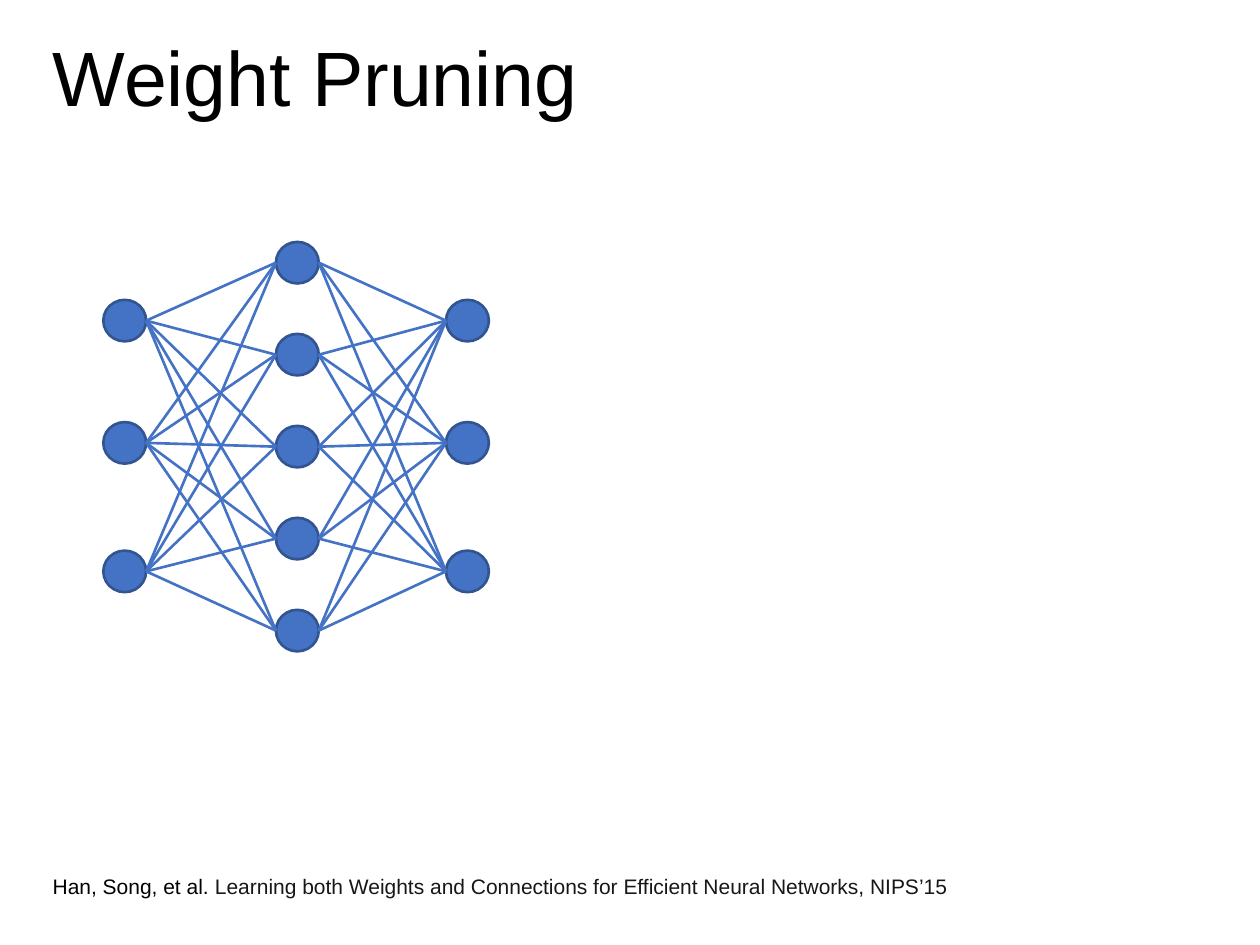
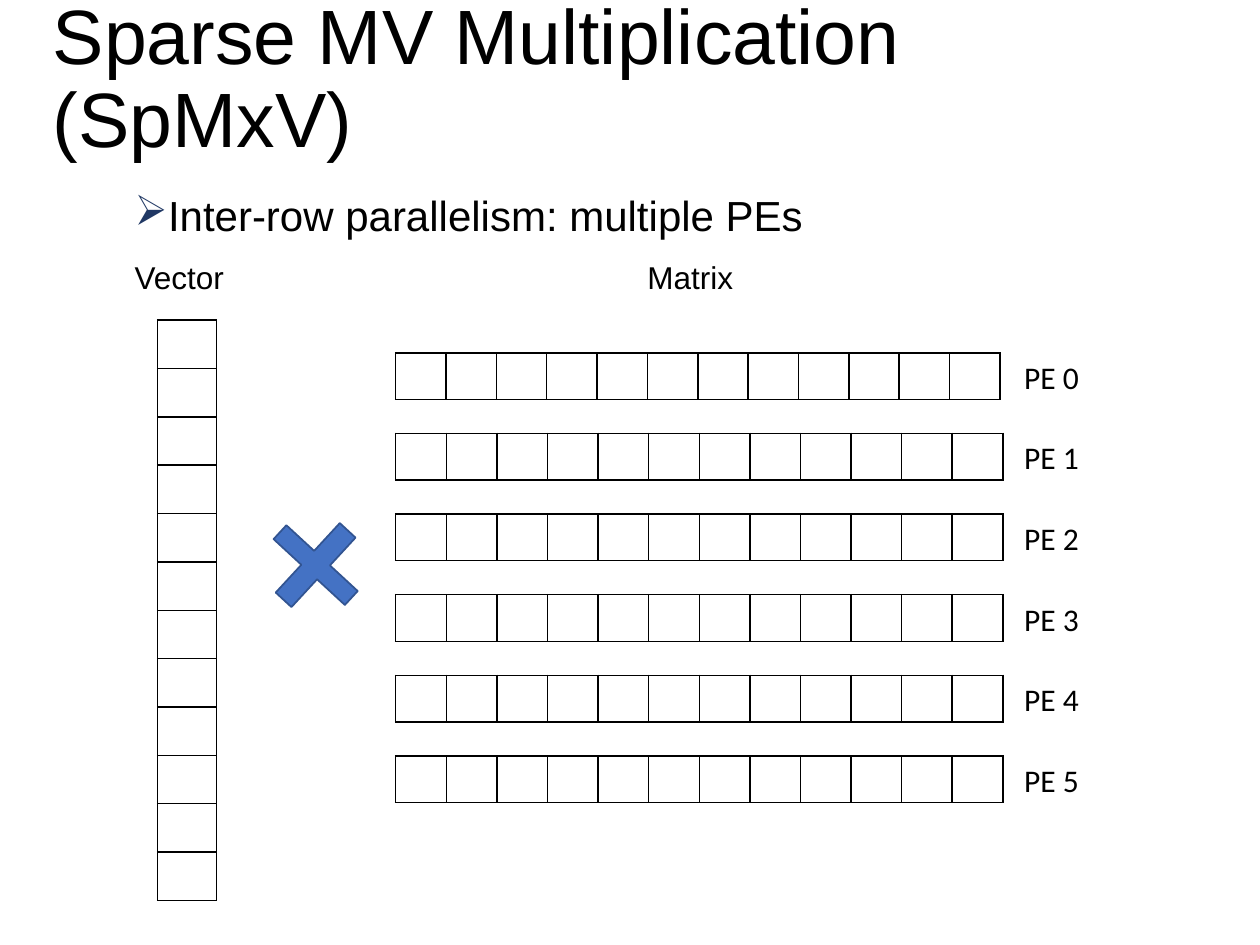
"""Build two slides on weight pruning and sparse matrix-vector multiplication."""
from dataclasses import dataclass
from itertools import product

from lxml import etree
from pptx import Presentation
from pptx.dml.color import RGBColor
from pptx.enum.shapes import MSO_CONNECTOR, MSO_SHAPE
from pptx.enum.text import MSO_ANCHOR
from pptx.oxml.ns import qn
from pptx.util import Inches, Pt

STRAIGHT = MSO_CONNECTOR.STRAIGHT
ELLIPSE = MSO_SHAPE.OVAL
PLUS = MSO_SHAPE.CROSS
TOP = MSO_ANCHOR.TOP
MIDDLE = MSO_ANCHOR.MIDDLE
BLANK_LAYOUT = 6


@dataclass(frozen=True)
class Theme:
    """Colours, fonts and type sizes of the deck."""

    ink: str = "000000"
    citation: str = "181717"
    accent: str = "4472C4"
    accent_edge: str = "325491"
    bullet: str = "203864"
    font: str = "Arial"
    label_font: str = "Calibri"
    title_size: int = 44
    body_size: int = 24
    label_size: int = 18
    source_size: int = 12


class Deck:
    """Holds the theme and the current slide and draws each kind of element."""

    def __init__(self, theme):
        """Open an empty 10 by 7.5 inch presentation."""
        self.theme = theme
        self.presentation = Presentation()
        self.presentation.slide_width = Inches(10)
        self.presentation.slide_height = Inches(7.5)
        self.slide = None

    def new_slide(self, title):
        """Start a blank slide with the shared title."""
        layout = self.presentation.slide_layouts[BLANK_LAYOUT]
        self.slide = self.presentation.slides.add_slide(layout)
        self.text(title, box=(0.32, 0.1, 9.35, 1.09), size=self.theme.title_size,
                  anchor=MIDDLE, line_spacing=0.9)

    def text(self, *runs, box, size, font=None, colors=(), anchor=TOP,
             line_spacing=None, space_before=None):
        """Add a text box with one paragraph of runs and return the paragraph."""
        shape = self.slide.shapes.add_textbox(*map(Inches, box))
        frame = shape.text_frame
        frame.word_wrap = True
        frame.vertical_anchor = anchor
        paragraph = frame.paragraphs[0]
        paragraph.line_spacing = line_spacing
        paragraph.space_before = space_before
        for words, color in zip(runs, colors or [self.theme.ink] * len(runs)):
            run = paragraph.add_run()
            run.text = words
            run.font.name = font or self.theme.font
            run.font.size = Pt(size)
            run.font.color.rgb = RGBColor.from_string(color)
        return paragraph

    def bullet(self, words, box):
        """Add one arrow-bulleted line."""
        paragraph = self.text(words, box=box, size=self.theme.body_size,
                              line_spacing=0.9, space_before=Pt(10))
        properties = paragraph._p.get_or_add_pPr()
        properties.set("marL", str(Inches(0.25)))
        properties.set("indent", str(-Inches(0.25)))
        color = etree.SubElement(properties, qn("a:buClr"))
        etree.SubElement(color, qn("a:srgbClr"), val=self.theme.bullet)
        etree.SubElement(properties, qn("a:buChar"), char="➢")

    def shape(self, kind, box, line_width):
        """Add an accent-filled preset shape."""
        shape = self.slide.shapes.add_shape(kind, *map(Inches, box))
        shape.shadow.inherit = False
        shape.fill.solid()
        shape.fill.fore_color.rgb = RGBColor.from_string(self.theme.accent)
        shape.line.color.rgb = RGBColor.from_string(self.theme.accent_edge)
        shape.line.width = Pt(line_width)
        return shape

    def link(self, start, end):
        """Draw a straight accent line between two points."""
        line = self.slide.shapes.add_connector(STRAIGHT, *map(Inches, start + end))
        line.line.color.rgb = RGBColor.from_string(self.theme.accent)
        line.line.width = Pt(1.5)
        etree.SubElement(line._element.spPr, qn("a:effectLst"))

    def grid(self, row_count, column_count, box):
        """Add an empty table of equal cells with thin borders."""
        frame = self.slide.shapes.add_table(row_count, column_count, *map(Inches, box))
        table = frame.table
        table.first_row = table.horz_banding = False
        for column in table.columns:
            column.width = Inches(box[2] / column_count)
        for row in table.rows:
            row.height = Inches(box[3] / row_count)
        for cell in table.iter_cells():
            cell.margin_left = cell.margin_right = 0
            cell.margin_top = cell.margin_bottom = 0
            self.border(cell)
            cell.fill.background()

    def border(self, cell):
        """Give a table cell a thin line on all four sides."""
        properties = cell._tc.get_or_add_tcPr()
        for side in ("lnL", "lnR", "lnT", "lnB"):
            line = etree.SubElement(properties, qn(f"a:{side}"), w=str(Pt(1)))
            fill = etree.SubElement(line, qn("a:solidFill"))
            etree.SubElement(fill, qn("a:srgbClr"), val=self.theme.ink)


def weight_pruning(deck):
    """Draw the fully connected network and its source."""
    theme = deck.theme
    deck.new_slide("Weight Pruning")
    deck.text("Han, Song, et al.",
              " Learning both Weights and Connections for Efficient Neural Networks, NIPS’15",
              box=(0.32, 6.88, 9.2, 0.3), size=theme.source_size,
              colors=(theme.ink, theme.citation))
    width, height = 0.34, 0.33
    outer_tops = (2.38, 3.35, 4.37)
    hidden_tops = [1.92 + 0.73 * index for index in range(5)]
    layers = [(0.82, outer_tops), (2.19, hidden_tops), (3.54, outer_tops)]
    for left, tops in layers:
        for top in tops:
            deck.shape(ELLIPSE, (left, top, width, height), 1.5)
    for (left, tops), (next_left, next_tops) in zip(layers, layers[1:]):
        for top, next_top in product(tops, next_tops):
            deck.link((left + width, top + height / 2),
                      (next_left, next_top + height / 2))


def sparse_multiplication(deck):
    """Draw the vector, the matrix rows and their processing elements."""
    theme = deck.theme
    deck.new_slide("Sparse MV Multiplication (SpMxV)")
    deck.bullet("Inter-row parallelism: multiple PEs", (0.97, 1.5, 6.45, 0.56))
    deck.text("Vector", box=(0.97, 2, 1, 0.4), size=theme.label_size)
    deck.text("Matrix", box=(5.04, 2, 1.02, 0.4), size=theme.label_size)
    deck.grid(12, 1, (1.25, 2.54, 0.47, 4.61))
    times = deck.shape(PLUS, (2.12, 4.11, 0.77, 0.75), 1)
    times.adjustments[0] = 0.4
    times.rotation = 42.7
    for index, row_width in enumerate([4.8] + [4.82] * 5):
        top = 2.8 + 0.64 * index
        deck.grid(1, 12, (3.14, top, row_width, 0.37))
        deck.text(f"PE {index}", box=(8.03, top - 0.01, 0.72, 0.4),
                  size=theme.label_size, font=theme.label_font)


def main():
    """Build and save the deck."""
    deck = Deck(Theme())
    weight_pruning(deck)
    sparse_multiplication(deck)
    deck.presentation.save("out.pptx")


if __name__ == "__main__":
    main()
